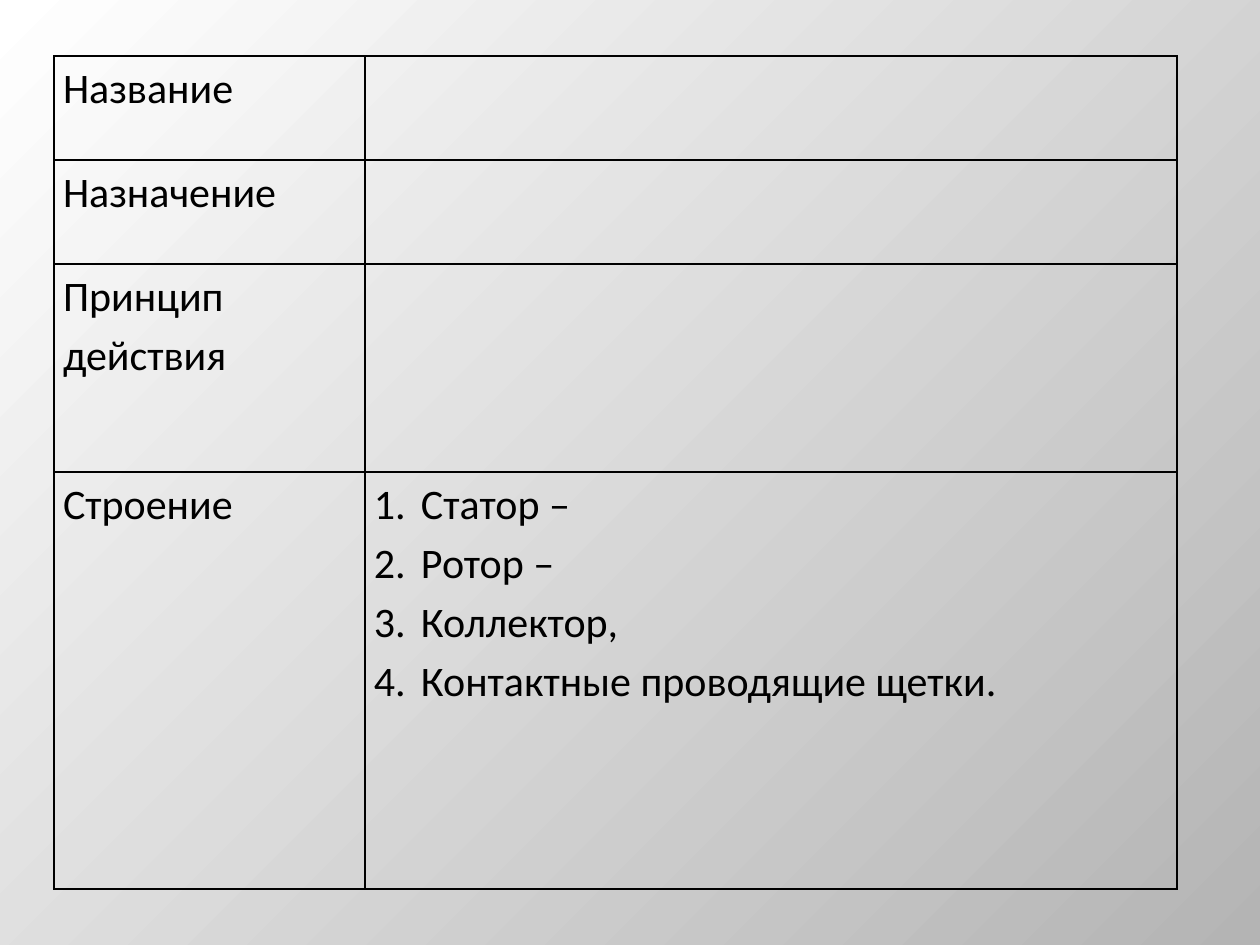
import pptx
import pptx.dml.color
import pptx.oxml
import pptx.oxml.ns
import pptx.util

PX = 914400 // 126
BLACK = pptx.dml.color.RGBColor(0x00, 0x00, 0x00)
WHITE = pptx.dml.color.RGBColor(0xFF, 0xFF, 0xFF)
GRAY = pptx.dml.color.RGBColor(0xB4, 0xB4, 0xB4)

# Content: label, numbered answers, row height in px
ROWS = [
    ("Название", [], 104),
    ("Назначение", [], 104),
    ("Принцип действия", [], 208),
    ("Строение", ["Статор –", "Ротор –", "Коллектор,",
                  "Контактные проводящие щетки."], 417),
]
COLUMNS = [311, 812]
LEFT, TOP = 54, 56
INDENT = 47
FONT = {"name": "Calibri", "size": pptx.util.Pt(24)}
CELL = {"margin_left": 9 * PX, "margin_right": 9 * PX,
        "margin_top": 0, "margin_bottom": 0}


def element(markup):
    return pptx.oxml.parse_xml(markup.replace(
        " ", f" {pptx.oxml.ns.nsdecls('a')} ", 1))


def set_borders(cell):
    properties = cell._tc.get_or_add_tcPr()
    for index, side in enumerate(("lnL", "lnR", "lnT", "lnB")):
        properties.insert(index, element(
            f'<a:{side} w="12700"><a:solidFill><a:srgbClr val="{BLACK}"/>'
            f'</a:solidFill></a:{side}>'))


def write(cell, lines, numbered):
    for index, line in enumerate(lines):
        frame = cell.text_frame
        para = frame.add_paragraph() if index else frame.paragraphs[0]
        para.line_spacing = 1.15
        if numbered:
            properties = para._p.get_or_add_pPr()
            properties.set("marL", str(INDENT * PX))
            properties.set("indent", str(-INDENT * PX))
            properties.append(element('<a:buAutoNum type="arabicPeriod"/>'))
        span = para.add_run()
        span.text = line
        for name, value in FONT.items():
            setattr(span.font, name, value)
        span.font.color.rgb = BLACK


deck = pptx.Presentation()
deck.slide_width, deck.slide_height = 1260 * PX, 945 * PX
page = deck.slides.add_slide(deck.slide_layouts[6])

# Background: gradient spreading from the top left corner
fill = page.background.fill
fill.gradient()
for stop, color in zip(fill.gradient_stops, (WHITE, GRAY)):
    stop.color.rgb = color
linear = page.element.find(".//" + pptx.oxml.ns.qn("a:lin"))
linear.getparent().replace(linear, element(
    '<a:path path="circle"><a:fillToRect r="100000" b="100000"/></a:path>'))

# Table
heights = [height for _, _, height in ROWS]
table = page.shapes.add_table(
    len(ROWS), len(COLUMNS), LEFT * PX, TOP * PX,
    sum(COLUMNS) * PX, sum(heights) * PX).table
table.first_row = table.horz_banding = False
for column, width in zip(table.columns, COLUMNS):
    column.width = width * PX
for row, (label, answers, height) in zip(table.rows, ROWS):
    row.height = height * PX
    for cell, lines, numbered in zip(row.cells, ([label], answers), (False, True)):
        for name, value in CELL.items():
            setattr(cell, name, value)
        cell.fill.background()
        set_borders(cell)
        write(cell, lines, numbered)

deck.save("out.pptx")
